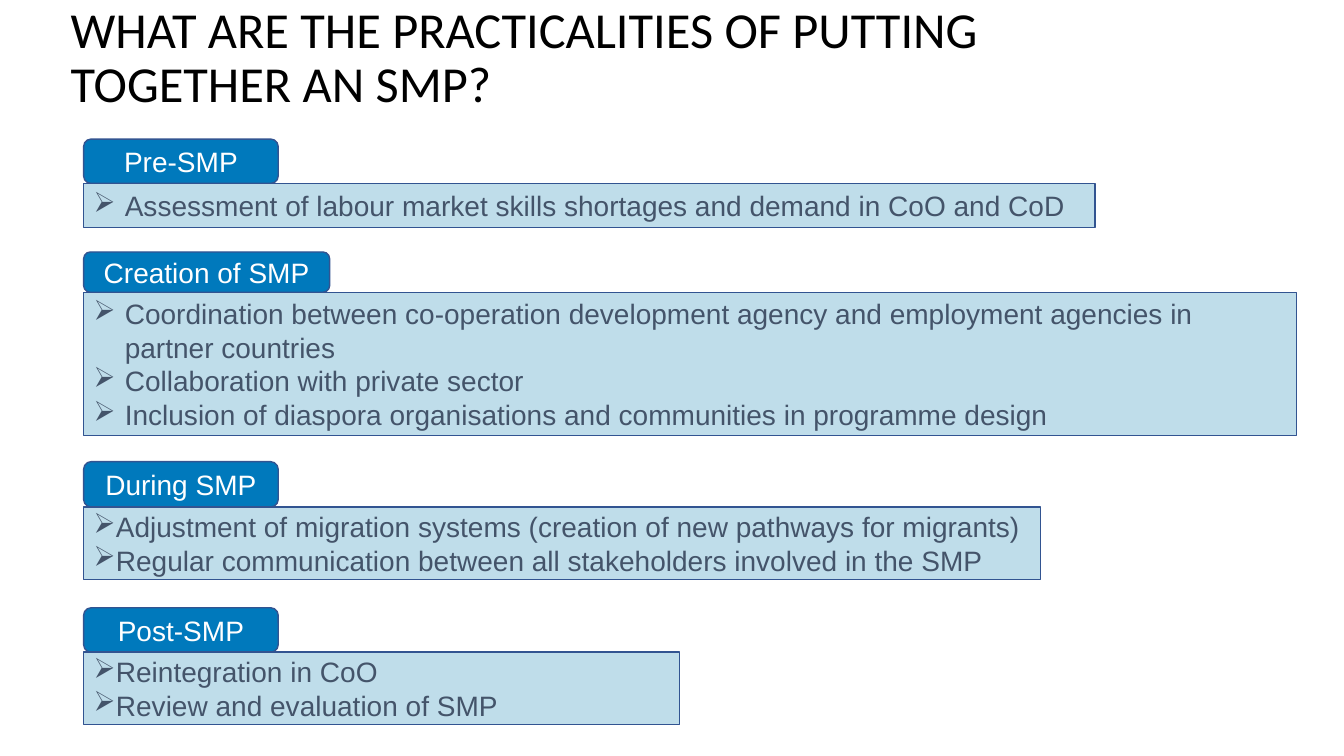
from dataclasses import dataclass

from lxml.etree import SubElement
from pptx import Presentation
from pptx.dml.color import RGBColor
from pptx.enum.shapes import MSO_SHAPE as Preset
from pptx.enum.text import MSO_ANCHOR as Anchor, MSO_AUTO_SIZE as AutoSize, PP_ALIGN as Align
from pptx.oxml.ns import qn
from pptx.util import Inches, Pt


@dataclass(frozen=True)
class Theme:
    title_color: RGBColor = RGBColor.from_string("000000")
    tab_fill: RGBColor = RGBColor.from_string("0079BC")
    tab_text: RGBColor = RGBColor.from_string("FFFFFF")
    panel_fill: RGBColor = RGBColor.from_string("BFDDEA")
    panel_text: RGBColor = RGBColor.from_string("44546A")
    outline: RGBColor = RGBColor.from_string("325491")
    title_font: str = "Calibri"
    body_font: str = "Arial"
    title_size: Pt = Pt(36)
    body_size: Pt = Pt(20)


THEME = Theme()
LEFT = 0.83
HANGING = 0.31

# Each phase: name, top, tab width, tab height, panel width, panel height, indent, steps
PHASES = [
    ("Pre-SMP", 1.38, 1.93, 0.44, 10.03, 0.44, HANGING,
     ["Assessment of labour market skills shortages and demand in CoO and CoD"]),
    ("Creation of SMP", 2.5, 2.44, 0.4, 12.03, 1.42, HANGING,
     ["Coordination between co-operation development agency and employment "
      "agencies in partner countries",
      "Collaboration with private sector",
      "Inclusion of diaspora organisations and communities in programme design"]),
    ("During SMP", 4.58, 1.93, 0.45, 9.49, 0.72, 0,
     ["Adjustment of migration systems (creation of new pathways for migrants)",
      "Regular communication between all stakeholders involved in the SMP"]),
    ("Post-SMP", 6.03, 1.93, 0.44, 5.91, 0.72, 0,
     ["Reintegration in CoO", "Review and evaluation of SMP"]),
]


def style_runs(paragraph, font, size, color):
    for run in paragraph.runs:
        run.font.name = font
        run.font.size = size
        run.font.color.rgb = color


def add_title(slide, text):
    title = slide.shapes.title
    title.left, title.top = Inches(0.6), Inches(0.15)
    title.width, title.height = Inches(10.13), Inches(0.88)
    frame = title.text_frame
    frame.text = text
    frame.word_wrap = True
    frame.auto_size = AutoSize.NONE
    frame.vertical_anchor = Anchor.MIDDLE
    heading = frame.paragraphs[0]
    heading.alignment = Align.LEFT
    heading.line_spacing = 0.9
    style_runs(heading, THEME.title_font, THEME.title_size, THEME.title_color)


def add_box(slide, preset, top, width, height, fill, lines, color, align):
    box = slide.shapes.add_shape(
        preset, Inches(LEFT), Inches(top), Inches(width), Inches(height))
    box.shadow.inherit = False
    box.fill.solid()
    box.fill.fore_color.rgb = fill
    box.line.color.rgb = THEME.outline
    box.line.width = Pt(1)
    frame = box.text_frame
    frame.text = "\n".join(lines)
    frame.word_wrap = True
    frame.vertical_anchor = Anchor.MIDDLE
    for paragraph in frame.paragraphs:
        paragraph.alignment = align
        style_runs(paragraph, THEME.body_font, THEME.body_size, color)
    return box


def add_bullet(paragraph, indent):
    properties = paragraph._p.get_or_add_pPr()
    properties.set("marL", str(Inches(indent)))
    properties.set("indent", str(-Inches(indent)))
    SubElement(properties, qn("a:buFont"), typeface="Wingdings")
    SubElement(properties, qn("a:buChar"), char="Ø")


def add_phase(slide, name, top, tab_width, tab_height, width, height, indent, steps):
    add_box(slide, Preset.ROUNDED_RECTANGLE, top, tab_width, tab_height,
            THEME.tab_fill, [name], THEME.tab_text, Align.CENTER)
    panel = add_box(slide, Preset.RECTANGLE, top + tab_height, width, height,
                    THEME.panel_fill, steps, THEME.panel_text, Align.LEFT)
    for step in panel.text_frame.paragraphs:
        add_bullet(step, indent)


def main():
    deck = Presentation()
    deck.slide_width, deck.slide_height = Inches(13.33), Inches(7.5)
    slide = deck.slides.add_slide(deck.slide_layouts[5])

    # Heading
    add_title(slide, "WHAT ARE THE PRACTICALITIES OF PUTTING TOGETHER AN SMP?")

    # Phases, each a tab above its panel of steps
    for phase in PHASES:
        add_phase(slide, *phase)

    deck.save("out.pptx")


if __name__ == "__main__":
    main()
